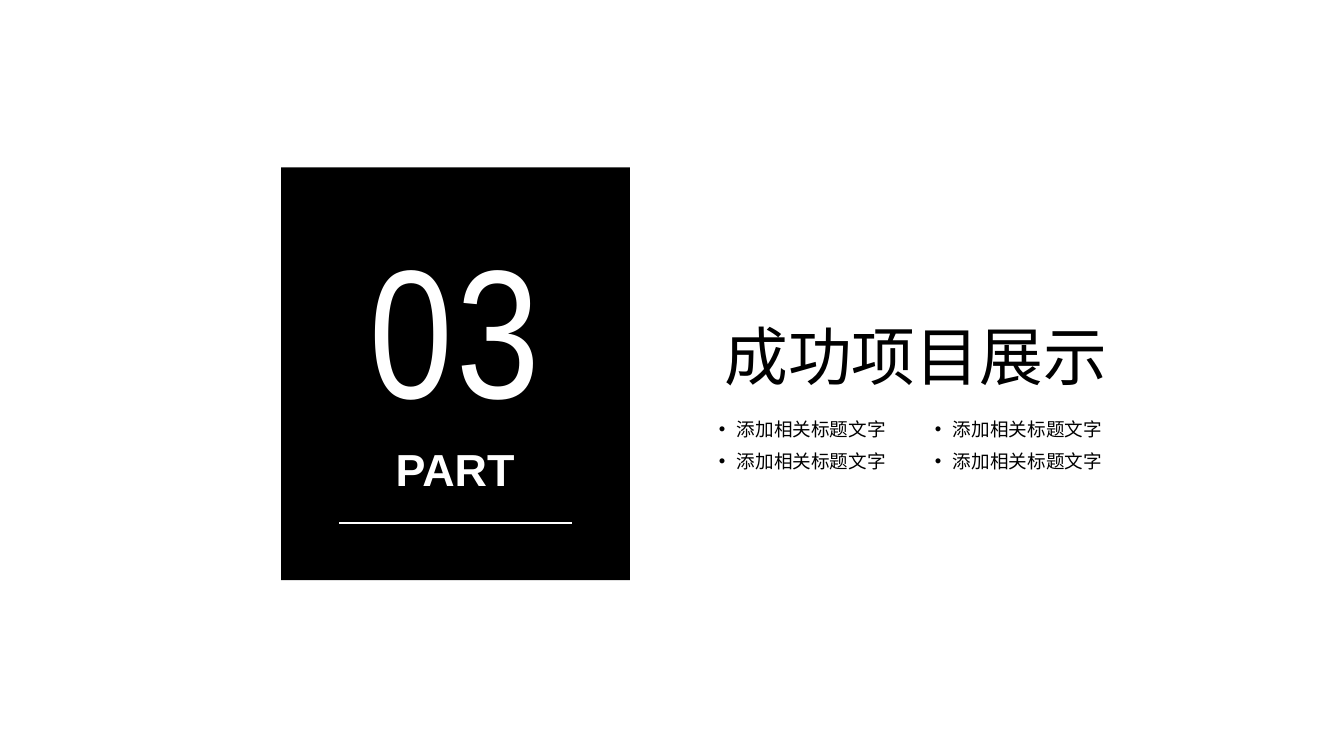
from itertools import product

from lxml.etree import SubElement
from pptx import Presentation
from pptx.dml.color import RGBColor
from pptx.enum.shapes import MSO_CONNECTOR, MSO_SHAPE
from pptx.enum.text import MSO_AUTO_SIZE, PP_ALIGN
from pptx.oxml.ns import qn
from pptx.util import Cm, Pt

COLORS = {"black": "000000", "white": "FFFFFF"}
TOPIC = "添加相关标题文字"


def color(name):
    return RGBColor.from_string(COLORS[name])


def add_panel(page, left, top, width, height):
    panel = page.shapes.add_shape(
        MSO_SHAPE.RECTANGLE, Cm(left), Cm(top), Cm(width), Cm(height))
    panel.shadow.inherit = False
    panel.fill.solid()
    panel.fill.fore_color.rgb = color("black")
    panel.line.fill.background()


def add_rule(page, left, right, y):
    rule = page.shapes.add_connector(
        MSO_CONNECTOR.STRAIGHT, Cm(left), Cm(y), Cm(right), Cm(y))
    rule.line.color.rgb = color("white")
    rule.line.width = Pt(1.5)
    SubElement(rule._element.spPr, qn("a:effectLst"))


def add_text(page, text, left, top, width, height, ink="black",
             margin=0, align=None, **font):
    """Add a one-line text box and return its paragraph and run."""
    box = page.shapes.add_textbox(Cm(left), Cm(top), Cm(width), Cm(height))
    frame = box.text_frame
    frame_format = {"word_wrap": True,
                    "auto_size": MSO_AUTO_SIZE.SHAPE_TO_FIT_TEXT}
    if margin is not None:
        for side in ("left", "top", "right", "bottom"):
            frame_format[f"margin_{side}"] = Cm(margin)
    for name, value in frame_format.items():
        setattr(frame, name, value)

    para = frame.paragraphs[0]
    para.alignment = align
    span = para.add_run()
    span.text = text
    for name, value in {"name": "Arial", **font}.items():
        setattr(span.font, name, value)
    span.font.color.rgb = color(ink)
    return para, span


def add_number(page, text, left, top, width, height):
    para, span = add_text(page, text, left, top, width, height, ink="white",
                          margin=None, align=PP_ALIGN.CENTER,
                          name="Arial Narrow", size=Pt(138))
    # Letter spacing of 3 pt and 20% space before
    span.font._element.set("spc", "300")
    before = SubElement(para._p.get_or_add_pPr(), qn("a:spcBef"))
    SubElement(before, qn("a:spcPct"), val="20000")


def add_bullet(page, text, left, top):
    para, _ = add_text(page, text, left, top, 5.11, 0.61, size=Pt(14))
    para.level = 1
    properties = para._p.get_or_add_pPr()
    properties.set("marL", str(Cm(0.48)))
    properties.set("indent", str(-Cm(0.48)))
    SubElement(properties, qn("a:buFont"), typeface="Arial")
    SubElement(properties, qn("a:buChar"), char="•")


def main():
    deck = Presentation()
    deck.slide_width, deck.slide_height = Cm(35.71), Cm(20.09)
    page = deck.slides.add_slide(deck.slide_layouts[6])

    # Black panel with the part number
    add_panel(page, 7.47, 4.45, 9.27, 10.97)
    add_rule(page, 9.02, 15.19, 13.89)
    add_text(page, "PART", 8.69, 11.73, 6.81, 1.45, ink="white",
             align=PP_ALIGN.CENTER, size=Pt(33.8), bold=True)
    add_number(page, "03", 8.05, 5.59, 8.08, 6.15)

    # Section title and two by two topics
    add_text(page, "成功项目展示", 19.25, 8.43, 11.99, 2.06, size=Pt(48))
    for row, column in product(range(2), repeat=2):
        add_bullet(page, TOPIC, 19.1 + 5.74 * column, 11.1 + 0.86 * row)

    deck.save("out.pptx")


if __name__ == "__main__":
    main()
